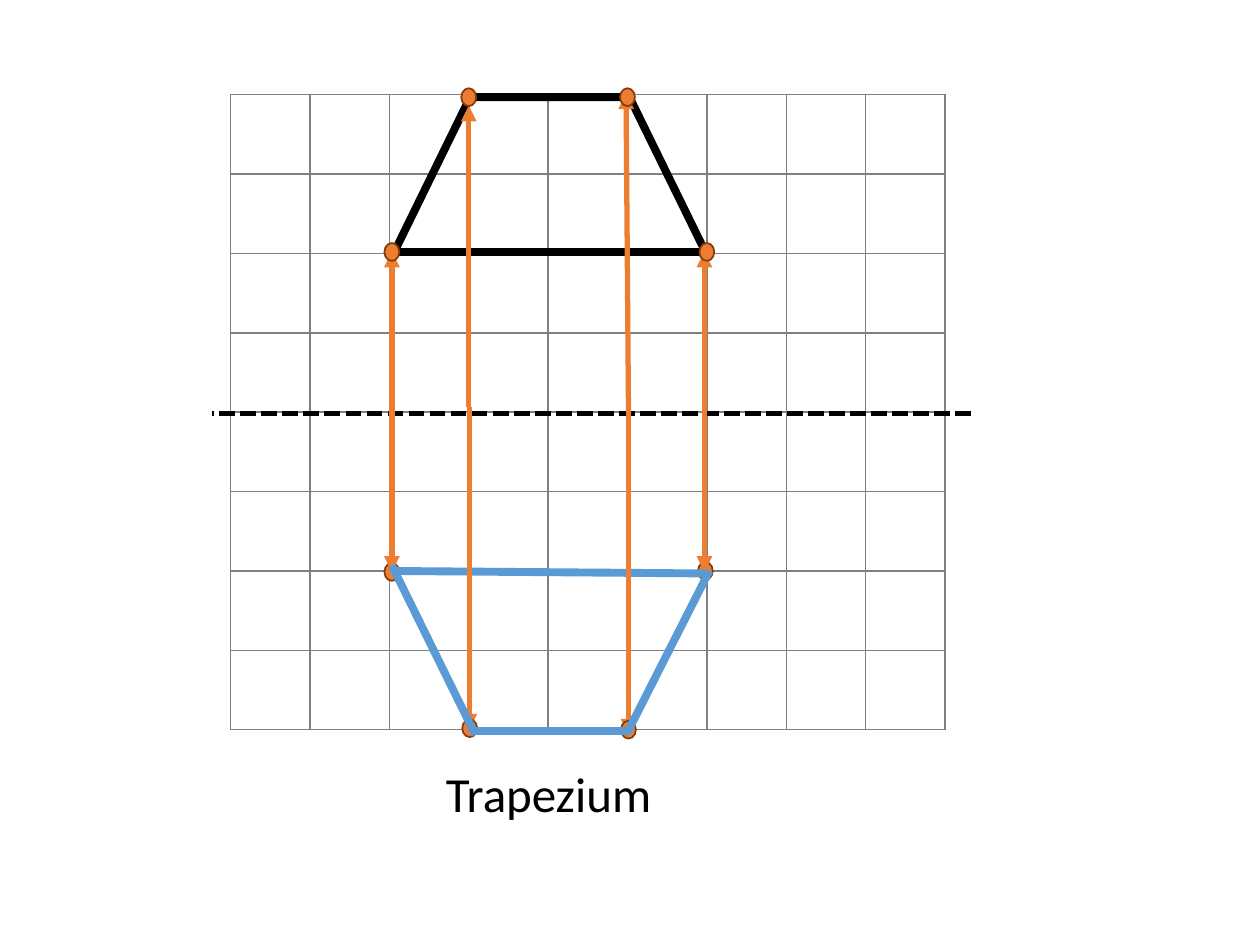
from lxml.etree import SubElement
from pptx import Presentation
from pptx.dml.color import RGBColor
from pptx.enum.dml import MSO_LINE
from pptx.enum.shapes import MSO_CONNECTOR, MSO_SHAPE
from pptx.oxml.ns import qn
from pptx.util import Cm, Pt

BLACK = RGBColor(0x00, 0x00, 0x00)
GREY = RGBColor(0x80, 0x80, 0x80)
ORANGE = RGBColor(0xED, 0x7D, 0x31)
BROWN = RGBColor(0x84, 0x3C, 0x0B)
BLUE = RGBColor(0x5B, 0x9B, 0xD5)

ROWS, COLUMNS, CELL = 8, 9, 1.6
DOT_WIDTH, DOT_HEIGHT = 0.3, 0.36

presentation = Presentation()
presentation.slide_width, presentation.slide_height = Cm(25.4), Cm(19.05)
slide = presentation.slides.add_slide(presentation.slide_layouts[6])
shapes = slide.shapes


def add_line(start, end, color, width, arrow=False):
    ends = [Cm(value) for value in (*start, *end)]
    line = shapes.add_connector(MSO_CONNECTOR.STRAIGHT, *ends)
    line.line.color.rgb = color
    line.line.width = Pt(width)
    if arrow:
        SubElement(line.line._get_or_add_ln(), qn("a:tailEnd"), type="triangle")
    SubElement(line._element.spPr, qn("a:effectLst"))
    return line


def add_dots(centres):
    for x, y in centres:
        dot = shapes.add_shape(
            MSO_SHAPE.OVAL, Cm(x - DOT_WIDTH / 2), Cm(y - DOT_HEIGHT / 2),
            Cm(DOT_WIDTH), Cm(DOT_HEIGHT))
        dot.shadow.inherit = False
        dot.fill.solid()
        dot.fill.fore_color.rgb = ORANGE
        dot.line.color.rgb = BROWN
        dot.line.width = Pt(1)


# Square grid
grid = shapes.add_table(ROWS, COLUMNS, Cm(4.65), Cm(1.91),
                        Cm(COLUMNS * CELL), Cm(ROWS * CELL)).table
grid.first_row = grid.horz_banding = False
for column in grid.columns:
    column.width = Cm(CELL)
for row in grid.rows:
    row.height = Cm(CELL)
for cell in grid.iter_cells():
    properties = cell._tc.get_or_add_tcPr()
    for side in ("a:lnL", "a:lnR", "a:lnT", "a:lnB"):
        border = SubElement(properties, qn(side), w=str(Pt(1)))
        fill = SubElement(border, qn("a:solidFill"))
        SubElement(fill, qn("a:srgbClr"), val=str(GREY))
    cell.fill.background()

mirror_line = add_line((19.58, 8.33), (4.27, 8.33), BLACK, 3)
mirror_line.line.dash_style = MSO_LINE.SQUARE_DOT

trapezium = shapes.add_shape(MSO_SHAPE.TRAPEZOID, Cm(7.95), Cm(1.96), Cm(6.27), Cm(3.12))
trapezium.adjustments[0] = 0.49
trapezium.shadow.inherit = False
trapezium.fill.background()
trapezium.line.color.rgb = BLACK
trapezium.line.width = Pt(4.5)

# Corners of the long side and their reflections
add_dots([(7.9, 11.53), (14.22, 11.51)])
for x in (7.9, 14.2):
    for tip in (5.07, 11.53):
        add_line((x, 8.32), (x, tip), ORANGE, 3, arrow=True)
add_line((7.92, 11.51), (14.22, 11.56), BLUE, 4.5)

# Corners of the short side and their reflections
for start, tip in [
    ((9.45, 8.2), (9.45, 2.13)),
    ((9.46, 8.2), (9.46, 14.71)),
    ((12.67, 8.36), (12.62, 1.88)),
    ((12.67, 8.31), (12.67, 14.81)),
]:
    add_line(start, tip, ORANGE, 3, arrow=True)
add_dots([(7.9, 5.08), (14.25, 5.08), (9.45, 1.96), (12.65, 1.96),
          (9.47, 14.68), (12.67, 14.71)])

# Remaining sides of the reflected trapezium
for start, end in [
    ((9.5, 14.73), (12.73, 14.73)),
    ((7.9, 11.4), (9.58, 14.81)),
    ((14.3, 11.51), (12.65, 14.76)),
]:
    add_line(start, end, BLUE, 4.5)

label = shapes.add_textbox(Cm(8.74), Cm(15.27), Cm(4.7), Cm(1.45))
label.text_frame.word_wrap = False
paragraph = label.text_frame.paragraphs[0]
paragraph.text = "Trapezium"
for name, value in {"name": "Calibri", "size": Pt(28)}.items():
    setattr(paragraph.font, name, value)
paragraph.font.color.rgb = BLACK

presentation.save("out.pptx")
